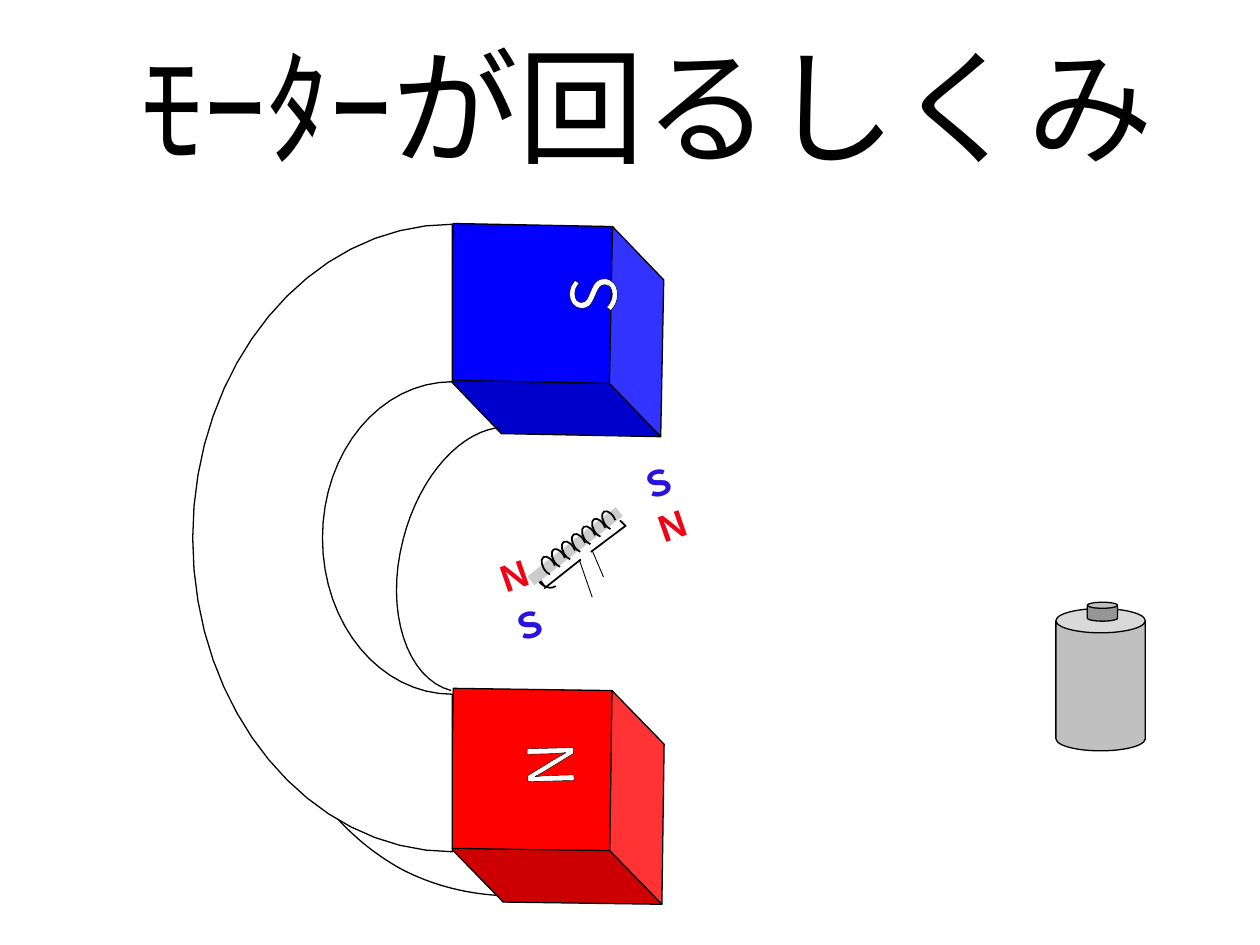
from lxml.etree import SubElement
from pptx import Presentation
from pptx.dml.color import RGBColor
from pptx.enum.shapes import MSO_CONNECTOR, MSO_SHAPE as Shape
from pptx.enum.text import MSO_ANCHOR, MSO_AUTO_SIZE, PP_ALIGN
from pptx.oxml import parse_xml
from pptx.oxml.ns import nsdecls, qn
from pptx.util import Inches, Pt

BLACK = RGBColor(0x00, 0x00, 0x00)
WHITE = RGBColor(0xFF, 0xFF, 0xFF)
BLUE = RGBColor(0x00, 0x00, 0xFF)
RED = RGBColor(0xFF, 0x00, 0x00)
BATTERY_GRAY = RGBColor(0xC0, 0xC0, 0xC0)
CAP_GRAY = RGBColor(0x96, 0x96, 0x96)
CORE_GRAY = RGBColor(0xCC, 0xCC, 0xCC)
LABEL_RED = RGBColor(0xEF, 0x03, 0x14)
LABEL_BLUE = RGBColor(0x2B, 0x13, 0xDF)
GOTHIC = "Noto Sans CJK JP"
STEPS = 16

TITLE = {"size": Pt(72), "name": GOTHIC}
POLE = {"size": Pt(36), "name": GOTHIC}
LABEL = {"size": Pt(20), "name": "Arial", "bold": True}

BACK_EDGE = [(2.62, 6.43), (2.78, 6.62), (2.97, 6.78), (3.19, 6.9),
             (3.44, 7.03), (3.72, 7.1), (4.02, 7.11)]
INNER_EDGE = [(4, 3.39), (3.67, 3.4), (3.33, 3.77), (3.2, 4.28),
              (3.05, 4.85), (3.23, 5.39), (3.58, 5.48)]
FRONT_INNER = [(3.59, 5.51), (3.02, 5.51), (2.56, 4.96), (2.56, 4.27),
               (2.56, 3.58), (3.02, 3.03), (3.59, 3.03)]
FRONT_OUTER = [(3.59, 1.78), (2.45, 1.78), (1.53, 2.9), (1.53, 4.27),
               (1.53, 5.64), (2.45, 6.76), (3.59, 6.76)]


def paint(sp, fill, line):
    sp.shadow.inherit = False
    if fill is None:
        sp.fill.background()
    else:
        sp.fill.solid()
        sp.fill.fore_color.rgb = fill
    if line:
        sp.line.color.rgb = BLACK
        sp.line.width = Pt(line)
    else:
        sp.line.fill.background()


def add_solid(shapes, kind, box, fill=None, line=0.75, rot=0, adj=()):
    sp = shapes.add_shape(kind, *map(Inches, box))
    paint(sp, fill, line)
    sp.rotation = rot
    for i, value in enumerate(adj):
        sp.adjustments[i] = value
    return sp


def add_arc(shapes, box, rot, angles, flip=False):
    sp = add_solid(shapes, Shape.ARC, box, line=1, rot=rot,
                   adj=[a * 0.6 for a in angles])
    if flip:
        sp._element.spPr.find(qn("a:xfrm")).set("flipV", "1")


def bezier(nodes):
    points = [nodes[0]]
    for k in range(0, len(nodes) - 1, 3):
        curve = nodes[k:k + 4]
        for n in range(1, STEPS + 1):
            t = n / STEPS
            weights = ((1 - t) ** 3, 3 * t * (1 - t) ** 2,
                       3 * t * t * (1 - t), t ** 3)
            points.append(tuple(sum(w * c[axis] for w, c in zip(weights, curve))
                                for axis in (0, 1)))
    return points


def add_curve(shapes, points, fill=None, close=False):
    start, *rest = [(Inches(x), Inches(y)) for x, y in points]
    builder = shapes.build_freeform(*start)
    builder.add_line_segments(rest, close=close)
    paint(builder.convert_to_shape(), fill, 0.75)


def add_line(shapes, start, end, width=1):
    line = shapes.add_connector(MSO_CONNECTOR.STRAIGHT, *map(Inches, start + end))
    line.line.color.rgb = BLACK
    line.line.width = Pt(width)
    SubElement(line._element.spPr, qn("a:effectLst"))


def add_text(shapes, text, box, style, color, rot=0, wrap=True):
    tb = shapes.add_textbox(*map(Inches, box))
    tb.rotation = rot
    tf = tb.text_frame
    tf.word_wrap = wrap
    p = tf.paragraphs[0]
    p.alignment = PP_ALIGN.CENTER
    r = p.add_run()
    r.text = text
    for name, value in style.items():
        setattr(r.font, name, value)
    r.font.color.rgb = color
    ea = parse_xml(f'<a:ea {nsdecls("a")} typeface="{style["name"]}"/>')
    r._r.rPr.find(qn("a:latin")).addnext(ea)
    return tb


def add_pole(shapes, text, box, rot):
    tb = add_text(shapes, text, box, POLE, WHITE, rot, wrap=False)
    outline = parse_xml(f'<a:ln {nsdecls("a")} w="9525"><a:solidFill>'
                        f'<a:srgbClr val="{BLACK}"/></a:solidFill></a:ln>')
    tb.text_frame.paragraphs[0].runs[0]._r.rPr.insert(0, outline)


def add_battery(shapes):
    add_solid(shapes, Shape.CAN, (8.38, 4.83, 0.71, 1.13), BATTERY_GRAY, adj=[0.272])
    add_solid(shapes, Shape.CAN, (8.63, 4.78, 0.24, 0.15), CAP_GRAY, adj=[0.32])


def add_magnet(shapes):
    add_curve(shapes, bezier(BACK_EDGE))
    add_solid(shapes, Shape.CUBE, (3.59, 1.78, 1.66, 1.68), BLUE, rot=91.1, adj=[0.25])
    add_pole(shapes, "S", (4.31, 2.1, 0.55, 0.48), 270)
    add_curve(shapes, bezier(INNER_EDGE))
    add_solid(shapes, Shape.CUBE, (3.58, 5.48, 1.69, 1.68), RED, rot=90.8, adj=[0.25])
    add_pole(shapes, "N", (4.27, 5.86, 0.54, 0.39), 88.5)
    add_curve(shapes, bezier(FRONT_INNER) + bezier(FRONT_OUTER), WHITE, close=True)


def add_coil(shapes):
    add_solid(shapes, Shape.RECTANGLE, (4.12, 4.29, 0.89, 0.09), CORE_GRAY,
              line=None, rot=321.9)
    add_arc(shapes, (4.25, 4.43, 0.16, 0.25), 321.9, (87.916, 166.676))
    for i in range(7):
        add_arc(shapes, (4.31 + 0.08 * i, 4.41 - 0.06 * i, 0.09, 0.16),
                149.7, (150.979, 68.6), flip=True)
    for start, end, width in [
        ((4.29, 4.61), (4.32, 4.65), 1),
        ((4.92, 4.13), (4.96, 4.17), 1),
        ((4.32, 4.67), (4.61, 4.44), 1),
        ((4.97, 4.17), (4.69, 4.38), 1),
        ((4.7, 4.37), (4.79, 4.58), 0.5),
        ((4.7, 4.74), (4.6, 4.45), 0.5),
    ]:
        add_line(shapes, start, end, width)
    for text, color, x, y in [
        ("Ｎ", LABEL_RED, 5.1, 3.97),
        ("Ｎ", LABEL_RED, 3.85, 4.37),
        ("Ｓ", LABEL_BLUE, 4.99, 3.63),
        ("Ｓ", LABEL_BLUE, 3.97, 4.76),
    ]:
        tb = add_text(shapes, text, (x, y, 0.37, 0.43), LABEL, color, rot=341)
        tb.text_frame.auto_size = MSO_AUTO_SIZE.SHAPE_TO_FIT_TEXT


def main():
    prs = Presentation()
    prs.slide_width, prs.slide_height = Inches(10), Inches(7.5)
    s = prs.slides.add_slide(prs.slide_layouts[6])
    title = add_text(s.shapes, "ﾓｰﾀｰが回るしくみ", (0.9, 0, 8.47, 1.65), TITLE, BLACK)
    title.text_frame.vertical_anchor = MSO_ANCHOR.MIDDLE
    for add_part in (add_battery, add_magnet, add_coil):
        add_part(s.shapes.add_group_shape().shapes)
    prs.save("out.pptx")


if __name__ == "__main__":
    main()
